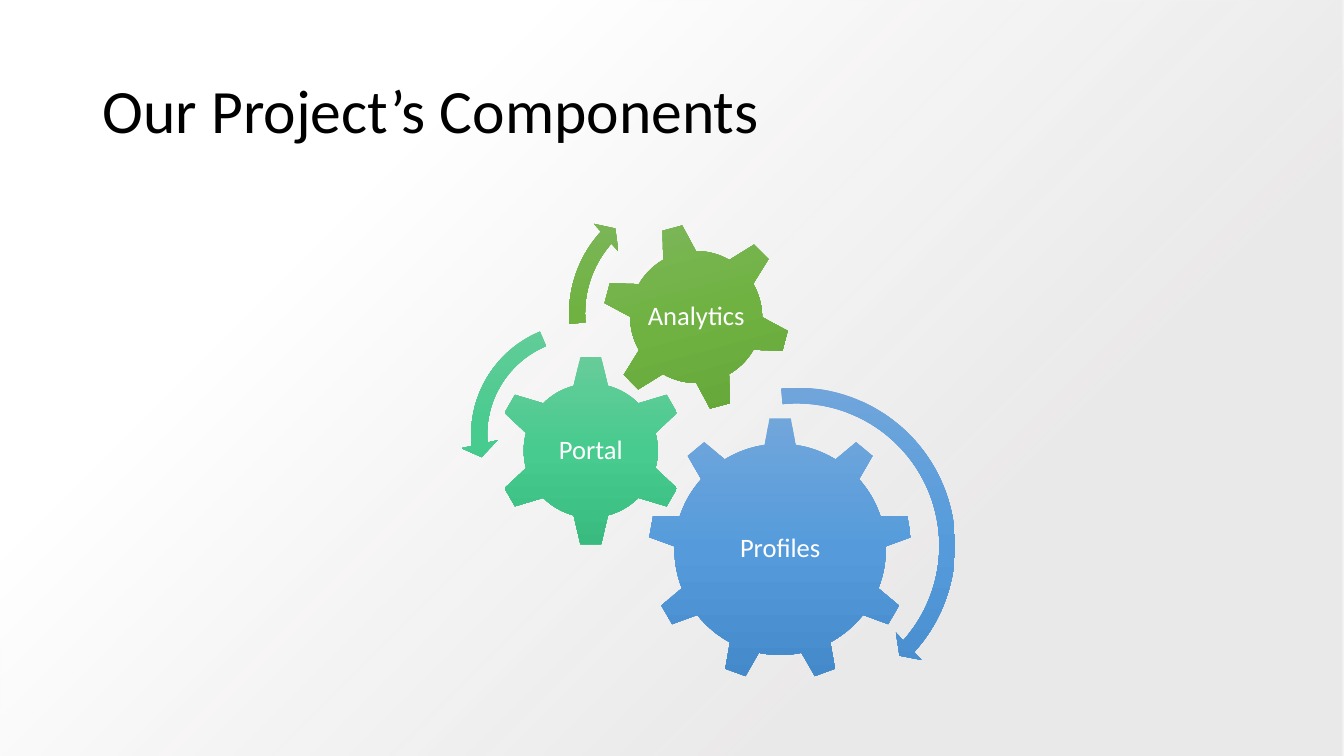
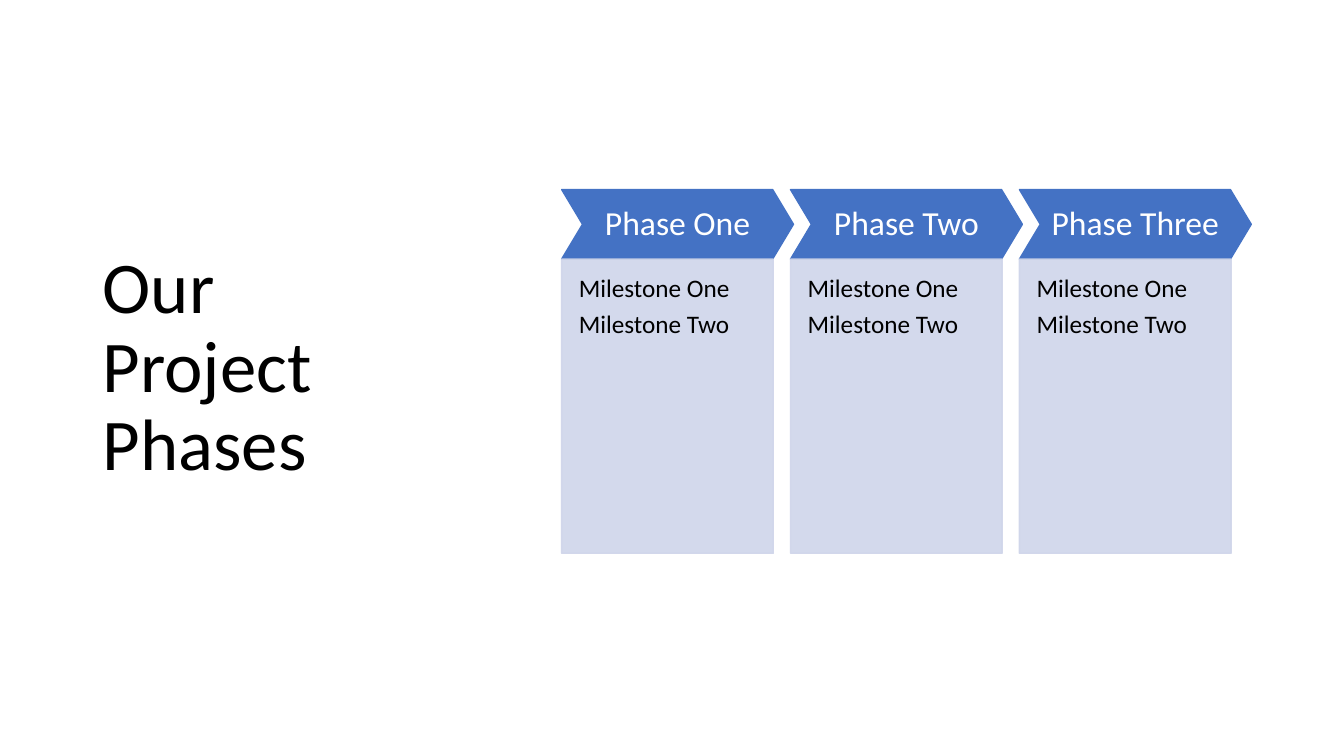
from dataclasses import dataclass
from typing import NamedTuple

from lxml import etree
from pptx import Presentation
from pptx import util as u
from pptx.dml.color import RGBColor
from pptx.enum import shapes, text
from pptx.oxml import ns, parse_xml

WIDTH, HEIGHT = u.Inches(13.33), u.Inches(7.5)
Shape = shapes.MSO_SHAPE


class Box(NamedTuple):
    """Left and width in percent of slide width, top and height of slide height."""
    left: float
    top: float
    width: float
    height: float

    def lengths(self) -> list[u.Emu]:
        sides = (WIDTH, HEIGHT, WIDTH, HEIGHT)
        return [u.Emu(round(share * side / 100)) for share, side in zip(self, sides)]


class Stop(NamedTuple):
    position: int
    colour: str
    opacity: int = 100


@dataclass(frozen=True)
class Theme:
    font: str = "Calibri"
    ink: str = "000000"
    paper: str = "FFFFFF"
    backdrop: str = "E7E6E6"
    phase: str = "4472C4"
    card: str = "CFD5EA"
    blue: tuple[str, ...] = ("71A6DB", "559BDB", "448ACA")
    mint: tuple[str, ...] = ("67CC9A", "47CB8E", "39BB7F")
    green: tuple[str, ...] = ("81B861", "6FB242", "62A336")
    title_size: int = 44
    side_title_size: int = 52
    gear_size: int = 19
    phase_size: int = 24
    milestone_size: int = 18
    line_spacing: float = 0.9


THEME = Theme()


@dataclass(frozen=True)
class Disc:
    """Square preset, centred on the slide; size in percent of slide height."""
    preset: Shape
    x: float
    y: float
    size: float
    adjustments: tuple[float, ...] = ()
    rotation: float = 0

    def box(self, across: float = 1, down: float = 1) -> Box:
        width = self.size * across * HEIGHT / WIDTH
        height = self.size * down
        return Box(self.x - width / 2, self.y - height / 2, width, height)


@dataclass(frozen=True)
class Component:
    name: str
    colours: tuple[str, ...]
    gear: Disc
    label_share: tuple[float, float]
    arrow: Disc


@dataclass(frozen=True)
class Phase:
    name: str
    milestones: tuple[str, ...] = ("Milestone One", "Milestone Two")


COMPONENTS = (
    Component("Profiles", THEME.blue, Disc(Shape.GEAR_9, 58.05, 72.67, 34.93), (0.6, 0.52),
              Disc(Shape.CIRCULAR_ARROW, 59.3, 72.2, 44.67,
                   (0.047, 2.99, 25.198, 158.534, 0.055))),
    Component("Portal", THEME.mint, Disc(Shape.GEAR_6, 43.96, 59.6, 25.33), (0.5, 0.5),
              Disc(Shape.LEFT_CIRCULAR_ARROW, 43.4, 57.53, 32.4,
                   (0.065, 4.3, 104.891, 148.378, 0.075))),
    Component("Analytics", THEME.green, Disc(Shape.GEAR_6, 51.8, 41.93, 24.93, rotation=345),
              (0.56, 0.56),
              Disc(Shape.CIRCULAR_ARROW, 51.39, 41.47, 34.93,
                   (0.06, 3.941, 133.138, 105.082, 0.07))),
)
PHASES = (Phase("Phase One"), Phase("Phase Two"), Phase("Phase Three"))

# Phase columns, in percent of the slide
PHASE_LEFT, PHASE_PITCH = 41.79, 17.03
HEADER_TOP, HEADER_WIDTH, HEADER_HEIGHT = 25.07, 17.25, 9.2
CARD_WIDTH, CARD_HEIGHT = 15.75, 38.93


def add_shape(slide, preset: Shape, box: Box):
    shape = slide.shapes.add_shape(preset, *box.lengths())
    shape.shadow.inherit = False
    shape.line.fill.background()
    return shape


def fill_gradient(shape, stops: list[Stop], direction: str) -> None:
    """Give the shape a gradient; direction is the a:lin or a:path element."""
    listed = "".join(
        f'<a:gs pos="{stop.position * 1000}"><a:srgbClr val="{stop.colour}">'
        f'<a:alpha val="{stop.opacity * 1000}"/></a:srgbClr></a:gs>' for stop in stops)
    gradient = parse_xml(f'<a:gradFill {ns.nsdecls("a")} rotWithShape="1">'
                         f'<a:gsLst>{listed}</a:gsLst>{direction}</a:gradFill>')
    shape.fill.background()
    properties = shape._element.spPr
    properties.replace(properties.find(ns.qn("a:noFill")), gradient)


def fill_solid(shape, colour: str, opacity: int = 100) -> None:
    """Colour the fill and a matching one-point outline."""
    shape.fill.solid()
    shape.fill.fore_color.rgb = RGBColor.from_string(colour)
    shape.line.color.rgb = RGBColor.from_string(colour)
    shape.line.width = u.Pt(1)
    if opacity < 100:
        for element in list(shape._element.spPr.iter(ns.qn("a:srgbClr"))):
            etree.SubElement(element, ns.qn("a:alpha")).set("val", str(opacity * 1000))


def write(shape, lines: tuple[str, ...], size: int, colour: str,
          align=text.PP_ALIGN.LEFT, anchor=text.MSO_ANCHOR.MIDDLE,
          insets: tuple[float, float, float, float] = (0.1, 0.05, 0.1, 0.05)) -> None:
    """Write one paragraph a line; insets run left, top, right, bottom in inches."""
    frame = shape.text_frame
    frame.word_wrap = True
    frame.auto_size = text.MSO_AUTO_SIZE.NONE
    frame.vertical_anchor = anchor
    (frame.margin_left, frame.margin_top,
     frame.margin_right, frame.margin_bottom) = map(u.Inches, insets)
    for index, line in enumerate(lines):
        paragraph = frame.add_paragraph() if index else frame.paragraphs[0]
        paragraph.text = line
        paragraph.alignment = align
        paragraph.line_spacing = THEME.line_spacing
        paragraph.space_before = u.Pt(6 if index else 0)
        paragraph.font.name = THEME.font
        paragraph.font.size = u.Pt(size)
        paragraph.font.color.rgb = RGBColor.from_string(colour)


def add_titled_slide(presentation, title: str, box: Box, size: int):
    slide = presentation.slides.add_slide(presentation.slide_layouts[5])
    shape = slide.shapes.title
    shape.left, shape.top, shape.width, shape.height = box.lengths()
    write(shape, (title,), size, THEME.ink)
    return slide


def add_backdrop(slide) -> None:
    shape = add_shape(slide, Shape.RECTANGLE, Box(0, 0, 100, 100))
    fill_gradient(shape, [Stop(28, THEME.backdrop, 84), Stop(74, THEME.paper)],
                  '<a:path path="circle"><a:fillToRect l="100000" t="100000"/></a:path>')
    # Behind the title: first after the two group property elements
    shape._element.getparent().insert(2, shape._element)


def add_disc(slide, disc: Disc, colours: tuple[str, ...]) -> None:
    shape = add_shape(slide, disc.preset, disc.box())
    shape.rotation = disc.rotation
    for index, value in enumerate(disc.adjustments):
        shape.adjustments[index] = value
    fill_gradient(shape, [Stop(50 * index, colour) for index, colour in enumerate(colours)],
                  '<a:lin ang="5400000" scaled="0"/>')


def add_component(slide, component: Component) -> None:
    add_disc(slide, component.gear, component.colours)
    label = slide.shapes.add_textbox(*component.gear.box(*component.label_share).lengths())
    write(label, (component.name,), THEME.gear_size, THEME.paper,
          text.PP_ALIGN.CENTER, insets=(0.03,) * 4)
    add_disc(slide, component.arrow, component.colours)


def add_phase(slide, phase: Phase, column: int) -> None:
    left = PHASE_LEFT + column * PHASE_PITCH
    header = add_shape(slide, Shape.CHEVRON,
                       Box(left, HEADER_TOP, HEADER_WIDTH, HEADER_HEIGHT))
    header.adjustments[0] = 0.3
    fill_solid(header, THEME.phase)
    write(header, (phase.name,), THEME.phase_size, THEME.paper,
          text.PP_ALIGN.CENTER, insets=(0.09,) * 4)

    card = add_shape(slide, Shape.RECTANGLE,
                     Box(left, HEADER_TOP + HEADER_HEIGHT, CARD_WIDTH, CARD_HEIGHT))
    fill_solid(card, THEME.card, 90)
    write(card, phase.milestones, THEME.milestone_size, THEME.ink,
          anchor=text.MSO_ANCHOR.TOP, insets=(0.17, 0.17, 0.17, 0.33))


def main() -> None:
    presentation = Presentation()
    presentation.slide_width, presentation.slide_height = WIDTH, HEIGHT

    # Components as interlocking gears
    slide = add_titled_slide(presentation, "Our Project’s Components",
                             Box(6.9, 5.33, 86.27, 19.33), THEME.title_size)
    add_backdrop(slide)
    for component in COMPONENTS:
        add_component(slide, component)

    # Phases with their milestones
    slide = add_titled_slide(presentation, "Our\vProject Phases",
                             Box(6.9, 8.13, 27.68, 81.2), THEME.side_title_size)
    for column, phase in enumerate(PHASES):
        add_phase(slide, phase, column)

    presentation.save("out.pptx")


if __name__ == "__main__":
    main()
